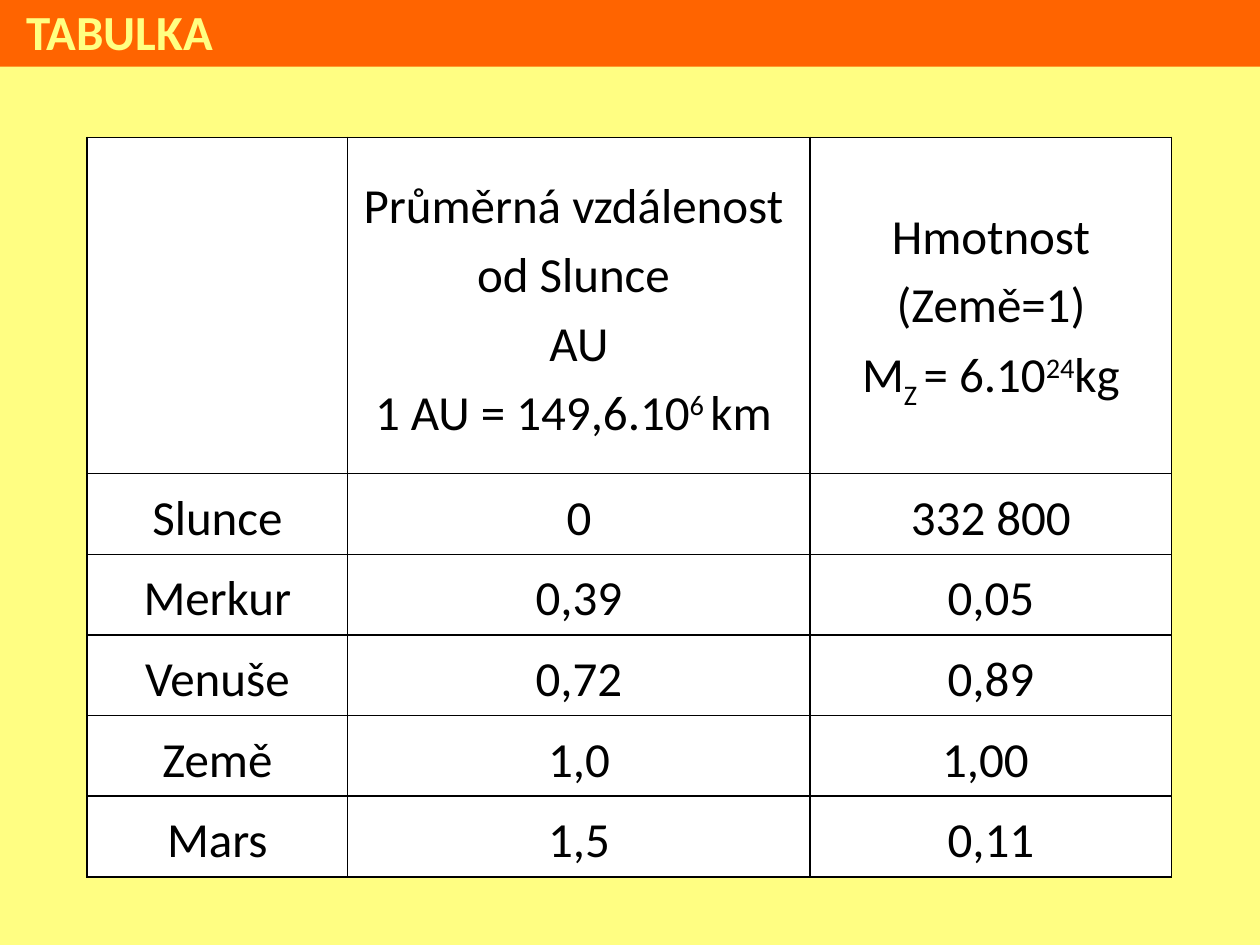
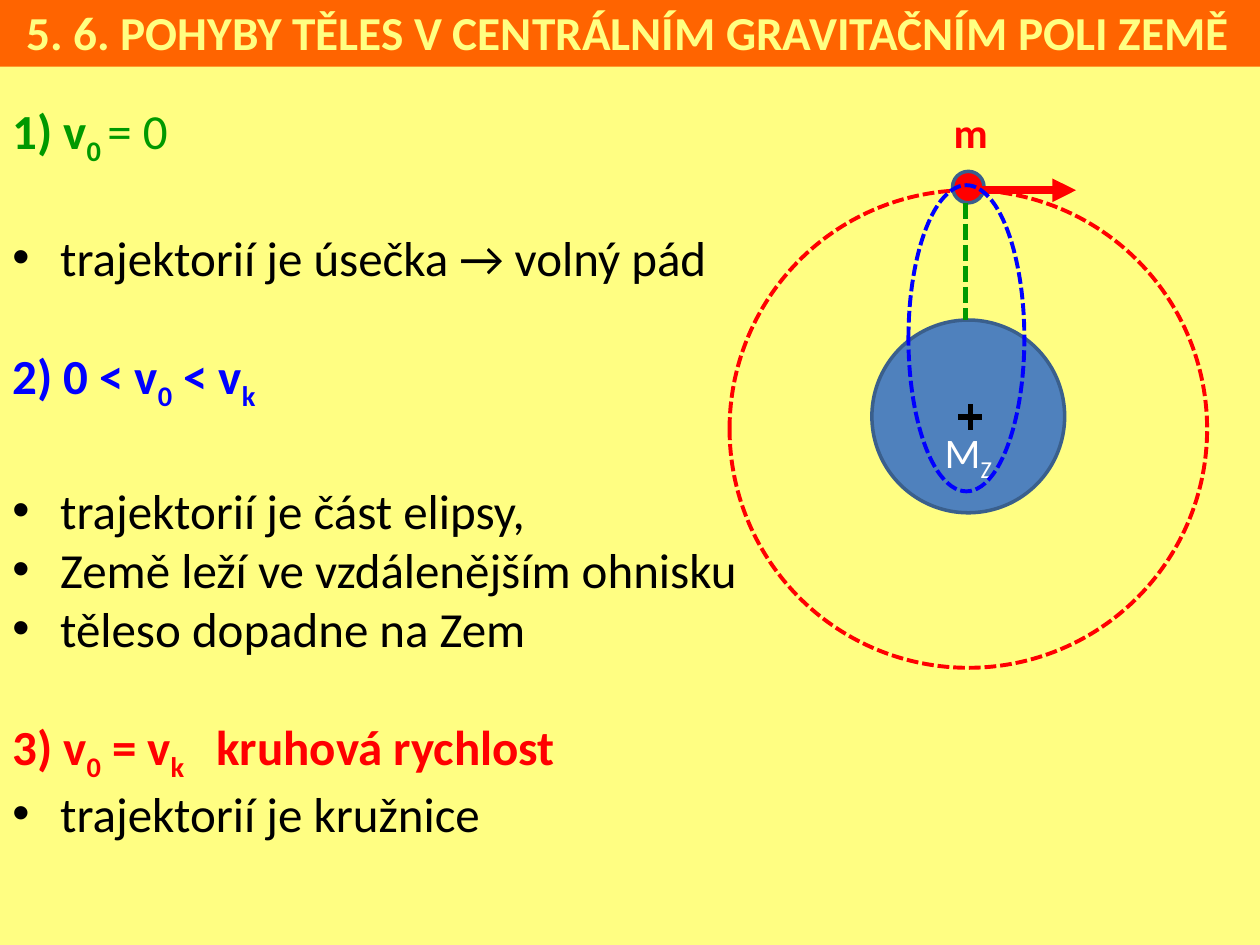
from dataclasses import dataclass
from typing import NamedTuple, Optional

from lxml import etree
from pptx import Presentation
from pptx.dml.color import RGBColor
from pptx.enum.dml import MSO_LINE
from pptx.enum.shapes import MSO_CONNECTOR as Connector, MSO_SHAPE as Preset
from pptx.enum.text import MSO_ANCHOR as Anchor, PP_ALIGN as Align
from pptx.oxml.ns import qn
from pptx.util import Inches, Pt


@dataclass(frozen=True)
class Theme:
    font: str = "Calibri"
    background: str = "FFFE82"
    band: str = "FF6400"
    title: str = "FFFF82"
    black: str = "000000"
    white: str = "FFFFFF"
    red: str = "FF0000"
    green: str = "009900"
    blue: str = "0000FF"
    earth: str = "4F81BD"
    outline: str = "3A5F8C"
    text_size: float = 28
    long_title_size: float = 27
    label_size: float = 24


THEME = Theme()
SUBSCRIPT, SUPERSCRIPT = -25, 30


class Span(NamedTuple):
    text: str
    baseline: int = 0
    bold: bool = False


class Line(NamedTuple):
    spans: list[Span]
    color: str = THEME.black
    bullet: bool = False
    gap: float = 0
    tab: float = 0


class Oval(NamedTuple):
    left: float
    top: float
    width: float
    height: float
    line: str
    weight: float
    fill: Optional[str] = None


class Stroke(NamedTuple):
    start: tuple[float, float]
    end: tuple[float, float]
    color: str
    weight: float
    dashed: bool = False
    arrow: bool = False


# Text and colour helpers
def rgb(color: str) -> RGBColor:
    return RGBColor.from_string(color)


def add_spans(paragraph, spans: list[Span], color: str, size: float) -> None:
    for span in spans:
        for index, piece in enumerate(span.text.split("\n")):
            if index:
                paragraph.add_line_break()
            run = paragraph.add_run()
            run.text = piece
            font = run.font
            font.name, font.size, font.bold = THEME.font, Pt(size), span.bold
            font.color.rgb = rgb(color)
            if span.baseline:
                run._r.get_or_add_rPr().set("baseline", str(span.baseline * 1000))


def add_line(paragraph, line: Line) -> None:
    paragraph.space_before = Pt(line.gap)
    properties = paragraph._p.get_or_add_pPr()
    if line.bullet:
        properties.set("marL", str(Inches(0.38)))
        properties.set("indent", str(-Inches(0.38)))
        etree.SubElement(properties, qn("a:buFont"), typeface="Arial")
        etree.SubElement(properties, qn("a:buChar"), char="•")
    if line.tab:
        tabs = etree.SubElement(properties, qn("a:tabLst"))
        etree.SubElement(tabs, qn("a:tab"), pos=str(Inches(line.tab)), algn="l")
    add_spans(paragraph, line.spans, line.color, THEME.text_size)


def add_text_box(slide, left: float, top: float, width: float, height: float):
    box = slide.shapes.add_textbox(Inches(left), Inches(top), Inches(width), Inches(height))
    box.text_frame.word_wrap = True
    return box.text_frame


# Shape helpers
def add_oval(slide, oval: Oval, dashed: bool = False):
    shape = slide.shapes.add_shape(Preset.OVAL, Inches(oval.left), Inches(oval.top),
                                   Inches(oval.width), Inches(oval.height))
    shape.shadow.inherit = False
    shape.line.color.rgb = rgb(oval.line)
    shape.line.width = Pt(oval.weight)
    if oval.fill:
        shape.fill.solid()
        shape.fill.fore_color.rgb = rgb(oval.fill)
    else:
        shape.fill.background()
    if dashed:
        shape.line.dash_style = MSO_LINE.SQUARE_DOT
    return shape


def add_stroke(slide, stroke: Stroke) -> None:
    points = [Inches(value) for value in (*stroke.start, *stroke.end)]
    connector = slide.shapes.add_connector(Connector.STRAIGHT, *points)
    connector.line.color.rgb = rgb(stroke.color)
    connector.line.width = Pt(stroke.weight)
    if stroke.dashed:
        connector.line.dash_style = MSO_LINE.SQUARE_DOT
    if stroke.arrow:
        etree.SubElement(connector.line._get_or_add_ln(), qn("a:tailEnd"), type="triangle")
    etree.SubElement(connector._element.spPr, qn("a:effectLst"))


# Parts shared by the slides
def add_slide(presentation):
    slide = presentation.slides.add_slide(presentation.slide_layouts[6])
    slide.background.fill.solid()
    slide.background.fill.fore_color.rgb = rgb(THEME.background)
    return slide


def add_title_band(slide, title: str, top: float, size: float) -> None:
    band = slide.shapes.add_shape(Preset.RECTANGLE, 0, Inches(top),
                                  Inches(10), Inches(0.53 - top))
    band.shadow.inherit = False
    band.fill.solid()
    band.fill.fore_color.rgb = rgb(THEME.band)
    band.line.fill.background()
    frame = band.text_frame
    frame.word_wrap = True
    frame.vertical_anchor = Anchor.MIDDLE
    frame.margin_left = Inches(0.21)
    frame.paragraphs[0].alignment = Align.LEFT
    add_spans(frame.paragraphs[0], [Span(title, bold=True)], THEME.title, size)


# Planet table
COLUMN_WIDTHS = [2.07, 3.67, 2.87]
ROW_HEIGHTS = [2.67] + [0.64] * 5
HEADER = [
    [],
    [Span("Průměrná vzdálenost \nod Slunce \nAU\n1 AU = 149,6.10"),
     Span("6 ", SUPERSCRIPT), Span("km ")],
    [Span("Hmotnost\n(Země=1)\nM"), Span("Z ", SUBSCRIPT), Span("= 6.10"),
     Span("24", SUPERSCRIPT), Span("kg")],
]
BODIES = [
    ("Slunce", "0", "332 800"),
    ("Merkur", "0,39", "0,05"),
    ("Venuše", "0,72", "0,89"),
    ("Země", "1,0", "1,00 "),
    ("Mars", "1,5", "0,11"),
]


def fill_cell(cell, spans: list[Span]) -> None:
    cell.margin_left = cell.margin_right = Inches(0.07)
    cell.margin_top = cell.margin_bottom = 0
    cell.vertical_anchor = Anchor.MIDDLE
    properties = cell._tc.get_or_add_tcPr()
    for side in ("lnL", "lnR", "lnT", "lnB"):
        border = etree.SubElement(properties, qn(f"a:{side}"), w=str(Pt(1)))
        solid = etree.SubElement(border, qn("a:solidFill"))
        etree.SubElement(solid, qn("a:srgbClr"), val=THEME.black)
    cell.fill.solid()
    cell.fill.fore_color.rgb = rgb(THEME.white)
    paragraph = cell.text_frame.paragraphs[0]
    paragraph.alignment = Align.CENTER
    paragraph.line_spacing = 1.15
    add_spans(paragraph, spans, THEME.black, THEME.text_size)


def build_table_slide(presentation) -> None:
    slide = add_slide(presentation)
    add_title_band(slide, "TABULKA", -0.04, THEME.text_size)
    rows = [HEADER] + [[[Span(text)] for text in body] for body in BODIES]
    table = slide.shapes.add_table(
        len(rows), len(COLUMN_WIDTHS), Inches(0.69), Inches(1.09),
        Inches(sum(COLUMN_WIDTHS)), Inches(sum(ROW_HEIGHTS))).table
    table.first_row = table.horz_banding = False
    for column, width in zip(table.columns, COLUMN_WIDTHS):
        column.width = Inches(width)
    for row, height, contents in zip(table.rows, ROW_HEIGHTS, rows):
        row.height = Inches(height)
        for cell, spans in zip(row.cells, contents):
            fill_cell(cell, spans)


# Motions in the central field
def bold(text: str, baseline: int = 0) -> Span:
    return Span(text, baseline, True)


def bullet(text: str, gap: float = 0) -> Line:
    return Line([Span(text)], bullet=True, gap=gap)


MOTIONS = [
    Line([bold("1) v"), bold("0 ", SUBSCRIPT), Span("= 0")], THEME.green),
    bullet("trajektorií je úsečka → volný pád", gap=34),
    Line([bold("2) 0 < v"), bold("0", SUBSCRIPT), bold(" < v"), bold("k", SUBSCRIPT)],
         THEME.blue, gap=34),
    bullet("trajektorií je část elipsy,", gap=39),
    bullet("Země leží ve vzdálenějším ohnisku"),
    bullet("těleso dopadne na Zem"),
    Line([bold("3) v"), bold("0", SUBSCRIPT), bold(" = v"), bold("k", SUBSCRIPT),
          bold("\tkruhová rychlost")], THEME.red, gap=34, tab=1.62),
    bullet("trajektorií je kružnice"),
]
EARTH = Oval(6.92, 2.54, 1.53, 1.53, THEME.outline, 2, THEME.earth)
CIRCLE_PATH = Oval(5.79, 1.51, 3.79, 3.79, THEME.red, 2.25)
BODY = Oval(7.56, 1.36, 0.25, 0.25, THEME.outline, 2, THEME.red)
ELLIPSE_PATH = Oval(7.21, 1.47, 0.92, 2.43, THEME.blue, 2.25)
VELOCITY = Stroke((7.77, 1.51), (8.54, 1.51), THEME.red, 4.5, arrow=True)
FALL_PATH = Stroke((7.66, 1.61), (7.66, 2.54), THEME.green, 3, dashed=True)
CENTRE_MARK = [
    Stroke((7.7, 3.21), (7.7, 3.41), THEME.black, 3),
    Stroke((7.79, 3.31), (7.6, 3.31), THEME.black, 3),
]


def build_motion_slide(presentation) -> None:
    slide = add_slide(presentation)
    frame = add_text_box(slide, 0, 0.75, 10, 6.4)
    for index, line in enumerate(MOTIONS):
        add_line(frame.add_paragraph() if index else frame.paragraphs[0], line)
    add_title_band(slide, "5. 6. POHYBY TĚLES V CENTRÁLNÍM GRAVITAČNÍM POLI ZEMĚ",
                   -0.03, THEME.long_title_size)

    # Earth with its label below the centre
    earth_frame = add_oval(slide, EARTH).text_frame
    earth_frame.vertical_anchor = Anchor.MIDDLE
    earth_frame.margin_top, earth_frame.margin_bottom = Inches(0.61), 0
    earth_frame.paragraphs[0].alignment = Align.CENTER
    add_spans(earth_frame.paragraphs[0], [Span("M"), Span("Z", SUBSCRIPT)],
              THEME.white, THEME.label_size)

    # Moving body and its paths
    add_oval(slide, CIRCLE_PATH, dashed=True)
    add_oval(slide, BODY)
    label = add_text_box(slide, 7.47, 0.8, 0.61, 0.5)
    add_spans(label.paragraphs[0], [bold("m")], THEME.red, THEME.label_size)
    add_stroke(slide, VELOCITY)
    add_stroke(slide, FALL_PATH)
    add_oval(slide, ELLIPSE_PATH, dashed=True)
    for stroke in CENTRE_MARK:
        add_stroke(slide, stroke)


def main() -> None:
    presentation = Presentation()
    presentation.slide_width, presentation.slide_height = Inches(10), Inches(7.5)
    build_table_slide(presentation)
    build_motion_slide(presentation)
    presentation.save("out.pptx")


if __name__ == "__main__":
    main()
